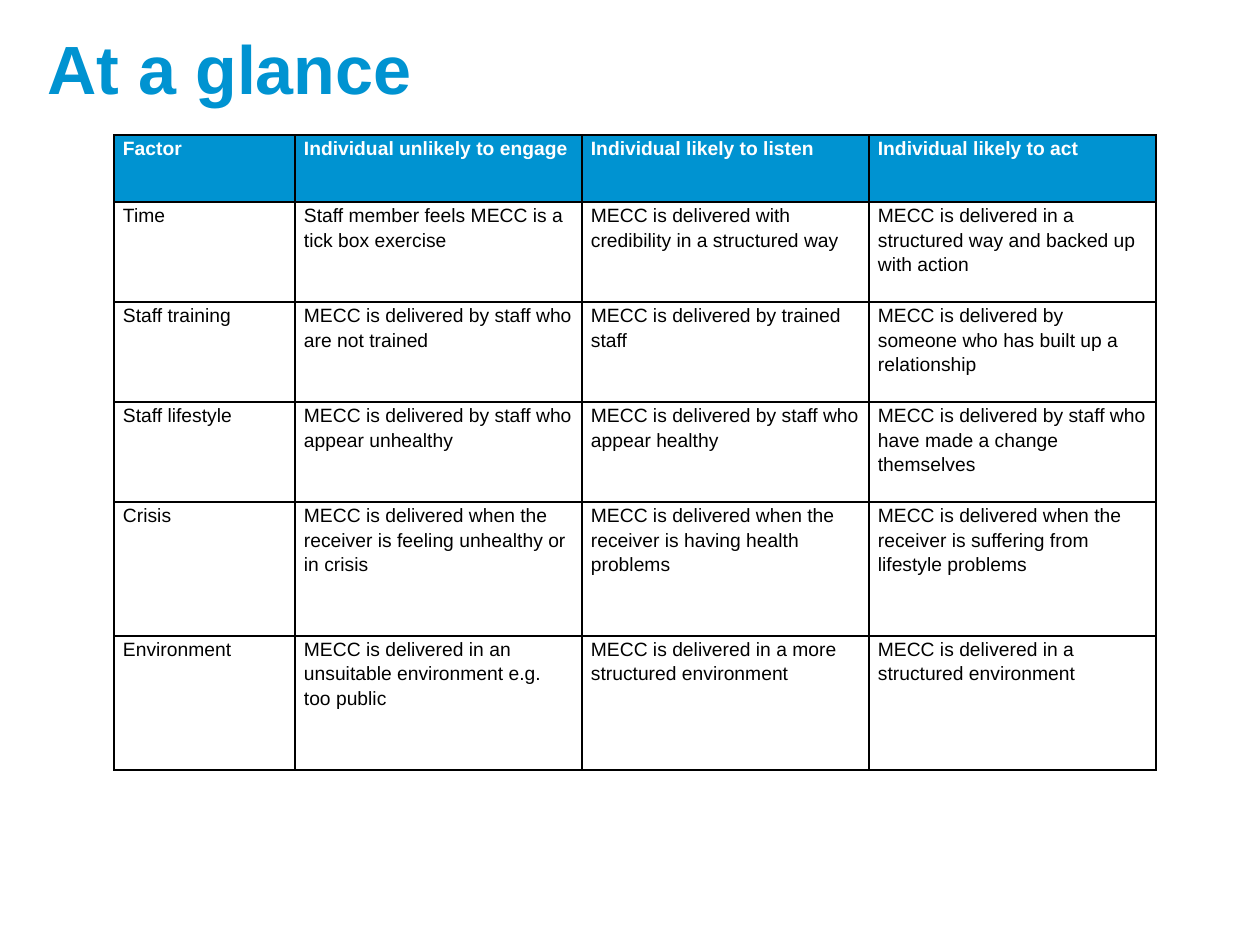
from lxml.etree import SubElement
from pptx import Presentation
from pptx.dml.color import RGBColor as RGB
from pptx.enum.text import MSO_ANCHOR as ANCHOR, PP_ALIGN as ALIGN
from pptx.oxml.ns import qn
from pptx.util import Pt

PX = 914400 / 126
COLORS = {"blue": "0093D1", "white": "FFFFFF", "black": "000000"}
COLUMNS = [181, 287, 287, 287]
ROWS = [67, 100, 100, 100, 134, 134]
FACTORS = [
    ["Factor", "Individual unlikely to engage", "Individual likely to listen",
     "Individual likely to act"],
    ["Time", "Staff member feels MECC is a tick box exercise",
     "MECC is delivered with credibility in a structured way",
     "MECC is delivered in a structured way and backed up with action"],
    ["Staff training", "MECC is delivered by staff who are not trained",
     "MECC is delivered by trained staff",
     "MECC is delivered by someone who has built up a relationship"],
    ["Staff lifestyle", "MECC is delivered by staff who appear unhealthy",
     "MECC is delivered by staff who appear healthy",
     "MECC is delivered by staff who have made a change themselves"],
    ["Crisis", "MECC is delivered when the receiver is feeling unhealthy or in crisis",
     "MECC is delivered when the receiver is having health problems",
     "MECC is delivered when the receiver is suffering from lifestyle problems"],
    ["Environment", "MECC is delivered in an unsuitable environment e.g. too public",
     "MECC is delivered in a more structured environment",
     "MECC is delivered in a structured environment"],
]


def emu(px):
    return round(px * PX)


class Deck:
    font = "Arial"

    def __init__(self, width, height):
        self.prs = Presentation()
        self.prs.slide_width, self.prs.slide_height = emu(width), emu(height)
        self.s = self.prs.slides.add_slide(self.prs.slide_layouts[5])

    def style(self, p, size, color, bold=False):
        p.alignment = ALIGN.LEFT
        p.font.name = self.font
        p.font.size = Pt(size)
        p.font.bold = bold
        p.font.color.rgb = RGB.from_string(COLORS[color])

    def title(self, text, x, y, w, h):
        sp = self.s.shapes.title
        sp.left, sp.top, sp.width, sp.height = map(emu, (x, y, w, h))
        tf = sp.text_frame
        tf.text = text
        tf.word_wrap = True
        tf.vertical_anchor = ANCHOR.TOP
        self.style(tf.paragraphs[0], 39, "blue", True)

    def borders(self, cell):
        pr = cell._tc.get_or_add_tcPr()
        for i, side in enumerate(("lnL", "lnR", "lnT", "lnB")):
            ln = pr.makeelement(qn(f"a:{side}"), {"w": str(Pt(1))})
            fill = SubElement(ln, qn("a:solidFill"))
            SubElement(fill, qn("a:srgbClr"), val=COLORS["black"])
            pr.insert(i, ln)

    def cell(self, cell, text, header):
        cell.margin_left = cell.margin_right = emu(9)
        cell.margin_top = cell.margin_bottom = 0
        cell.vertical_anchor = ANCHOR.TOP
        if header:
            cell.fill.solid()
            cell.fill.fore_color.rgb = RGB.from_string(COLORS["blue"])
        else:
            cell.fill.background()
        self.borders(cell)
        cell.text = text
        p = cell.text_frame.paragraphs[0]
        p.line_spacing = 1.15
        self.style(p, 11, "white" if header else "black", header)

    def table(self, data, x, y, widths, heights):
        box = map(emu, (x, y, sum(widths), sum(heights)))
        table = self.s.shapes.add_table(len(heights), len(widths), *box).table
        table.horz_banding = False
        for column, width in zip(table.columns, widths):
            column.width = emu(width)
        for r, (row, height) in enumerate(zip(table.rows, heights)):
            row.height = emu(height)
            for cell, text in zip(row.cells, data[r]):
                self.cell(cell, text, r == 0)


def main():
    deck = Deck(1260, 945)
    deck.title("At a glance", 35, 20, 394, 96)
    deck.table(FACTORS, 114, 135, COLUMNS, ROWS)
    deck.prs.save("out.pptx")


if __name__ == "__main__":
    main()
